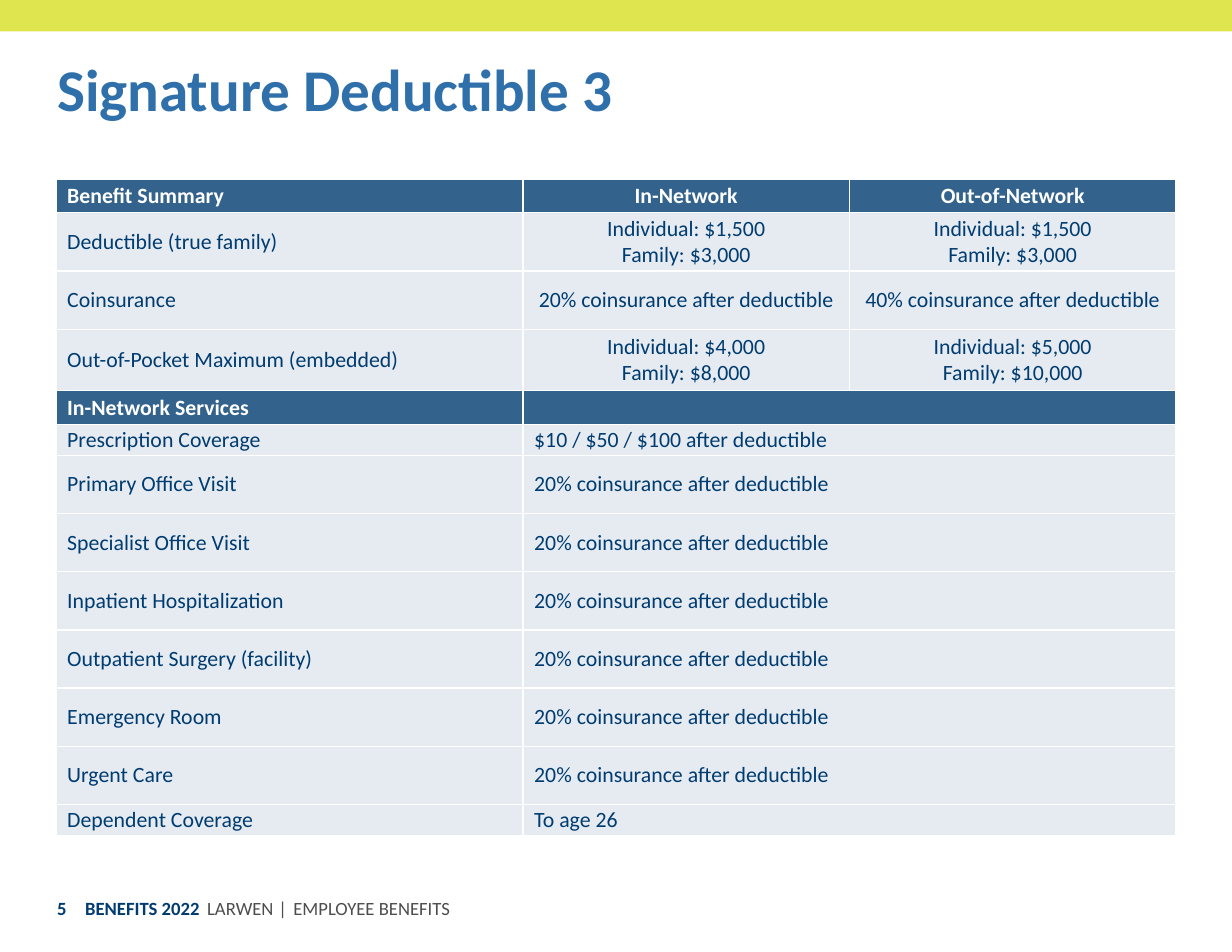
from lxml.etree import SubElement
from pptx import Presentation
from pptx.dml.color import RGBColor
from pptx.enum.shapes import MSO_SHAPE
from pptx.enum.text import MSO_ANCHOR, PP_ALIGN
from pptx.oxml.ns import qn
from pptx.util import Inches, Pt

NAVY, WHITE, LIME = "003C71", "FFFFFF", "D7DF24"
TITLE_BLUE, FOOTER_BLUE, GREY = "2F70AA", "003B71", "4D4D4E"
COINSURANCE = "20% coinsurance after deductible"
HEADERS = ["Benefit Summary", "In-Network Services"]
BENEFITS = [
    (1.2, "Benefit Summary", "In-Network", "Out-of-Network"),
    (2.08, "Deductible (true family)",
     "Individual: $1,500\nFamily: $3,000", "Individual: $1,500\nFamily: $3,000"),
    (2.08, "Coinsurance", COINSURANCE, "40% coinsurance after deductible"),
    (2.2, "Out-of-Pocket Maximum (embedded)",
     "Individual: $4,000\nFamily: $8,000", "Individual: $5,000\nFamily: $10,000"),
    (1.2, "In-Network Services", ""),
    (1.1, "Prescription Coverage", "$10 / $50 / $100 after deductible"),
    (2.08, "Primary Office Visit", COINSURANCE),
    (2.08, "Specialist Office Visit", COINSURANCE),
    (2.08, "Inpatient Hospitalization", COINSURANCE),
    (2.08, "Outpatient Surgery (facility)", COINSURANCE),
    (2.08, "Emergency Room", COINSURANCE),
    (2.08, "Urgent Care", COINSURANCE),
    (1.1, "Dependent Coverage", "To age 26"),
]


def rgb(value):
    return RGBColor.from_string(value)


def write(para, text, size=14, color=NAVY, bold=False, font="Calibri"):
    span = para.add_run()
    span.text = text
    span.font.name = font
    span.font.size = Pt(size)
    span.font.bold = bold
    span.font.color.rgb = rgb(color)


def paint(fill, color, opacity):
    fill.solid()
    fill.fore_color.rgb = rgb(color)
    color_node = fill._xPr.find(qn("a:solidFill"))[0]
    SubElement(color_node, qn("a:alpha"), val=str(opacity * 1000))


class BenefitSlide:
    def __init__(self, deck, columns=44, rows=34):
        self.slide = deck.slides.add_slide(deck.slide_layouts[6])
        self.column = deck.slide_width / columns
        self.row = deck.slide_height / rows

    def place(self, left, top, width, height):
        return (round(left * self.column), round(top * self.row),
                round(width * self.column), round(height * self.row))

    def bar(self, area, color, opacity):
        shape = self.slide.shapes.add_shape(MSO_SHAPE.RECTANGLE, *self.place(*area))
        shape.shadow.inherit = False
        shape.line.fill.background()
        paint(shape.fill, color, opacity)

    def text(self, area, spans, anchor=MSO_ANCHOR.MIDDLE, inset=0.05, tabs=()):
        frame = self.slide.shapes.add_textbox(*self.place(*area)).text_frame
        frame.word_wrap = True
        frame.vertical_anchor = anchor
        frame.margin_left = frame.margin_right = 0
        frame.margin_top = frame.margin_bottom = Inches(inset)
        para = frame.paragraphs[0]
        if tabs:
            stops = SubElement(para._p.get_or_add_pPr(), qn("a:tabLst"))
            for stop in tabs:
                SubElement(stops, qn("a:tab"), pos=str(round(stop * self.column)), algn="l")
        for text, style in spans:
            write(para, text, **style)

    def borders(self, cell, sides):
        properties = cell._tc.get_or_add_tcPr()
        for side in sides:
            line = SubElement(properties, qn(f"a:ln{side}"), w=str(Pt(1)))
            fill = SubElement(line, qn("a:solidFill"))
            SubElement(fill, qn("a:srgbClr"), val=WHITE)

    def cell(self, cell, text, header, centered):
        cell.vertical_anchor = MSO_ANCHOR.MIDDLE
        cell.margin_left = cell.margin_right = 0 if centered else Inches(0.1)
        cell.margin_top = cell.margin_bottom = 0
        paint(cell.fill, NAVY, 80 if header else 10)
        for index, line in enumerate(text.split("\n")):
            frame = cell.text_frame
            para = frame.add_paragraph() if index else frame.paragraphs[0]
            para.alignment = PP_ALIGN.CENTER if centered else PP_ALIGN.LEFT
            write(para, line, color=WHITE if header else NAVY, bold=header)

    def table(self, left, top, widths, entries):
        area = self.place(left, top, sum(widths), sum(entry[0] for entry in entries))
        table = self.slide.shapes.add_table(len(entries), len(widths), *area).table
        table.first_row = table.horz_banding = False
        for column, width in zip(table.columns, widths):
            column.width = round(width * self.column)
        last_row, last_column = len(entries) - 1, len(widths) - 1
        for y, (height, *texts) in enumerate(entries):
            table.rows[y].height = round(height * self.row)
            merged = len(texts) < len(widths)
            if merged:
                table.cell(y, 1).merge(table.cell(y, last_column))
            for x, text in enumerate(texts):
                inner = {"L": x > 0, "R": x < len(texts) - 1, "T": y > 0, "B": y < last_row}
                cell = table.cell(y, x)
                self.borders(cell, [side for side, shown in inner.items() if shown])
                self.cell(cell, text, texts[0] in HEADERS, x > 0 and not merged)


def main():
    deck = Presentation()
    deck.slide_width, deck.slide_height = Inches(11), Inches(8.5)
    page = BenefitSlide(deck)
    page.bar((0, 0, 44, 1.12), LIME, 80)
    page.text((2.04, 1.88, 30.44, 2.88),
              [("Signature Deductible 3", dict(size=38, color=TITLE_BLUE, bold=True))],
              anchor=MSO_ANCHOR.TOP, inset=0)
    page.table(2, 6.4, [16.68, 11.66, 11.66], BENEFITS)
    strong = dict(size=12, color=FOOTER_BLUE, bold=True)
    page.text((3.04, 31.52, 17.56, 1.8),
              [("BENEFITS 2022", strong),
               ("\tLARWEN\t|\tEMPLOYEE BENEFITS", dict(size=12, color=GREY))],
              tabs=(4.36, 6.9, 7.44))
    page.text((2.04, 31.52, 1.96, 1.8), [("5", strong)])
    deck.save("out.pptx")


if __name__ == "__main__":
    main()
